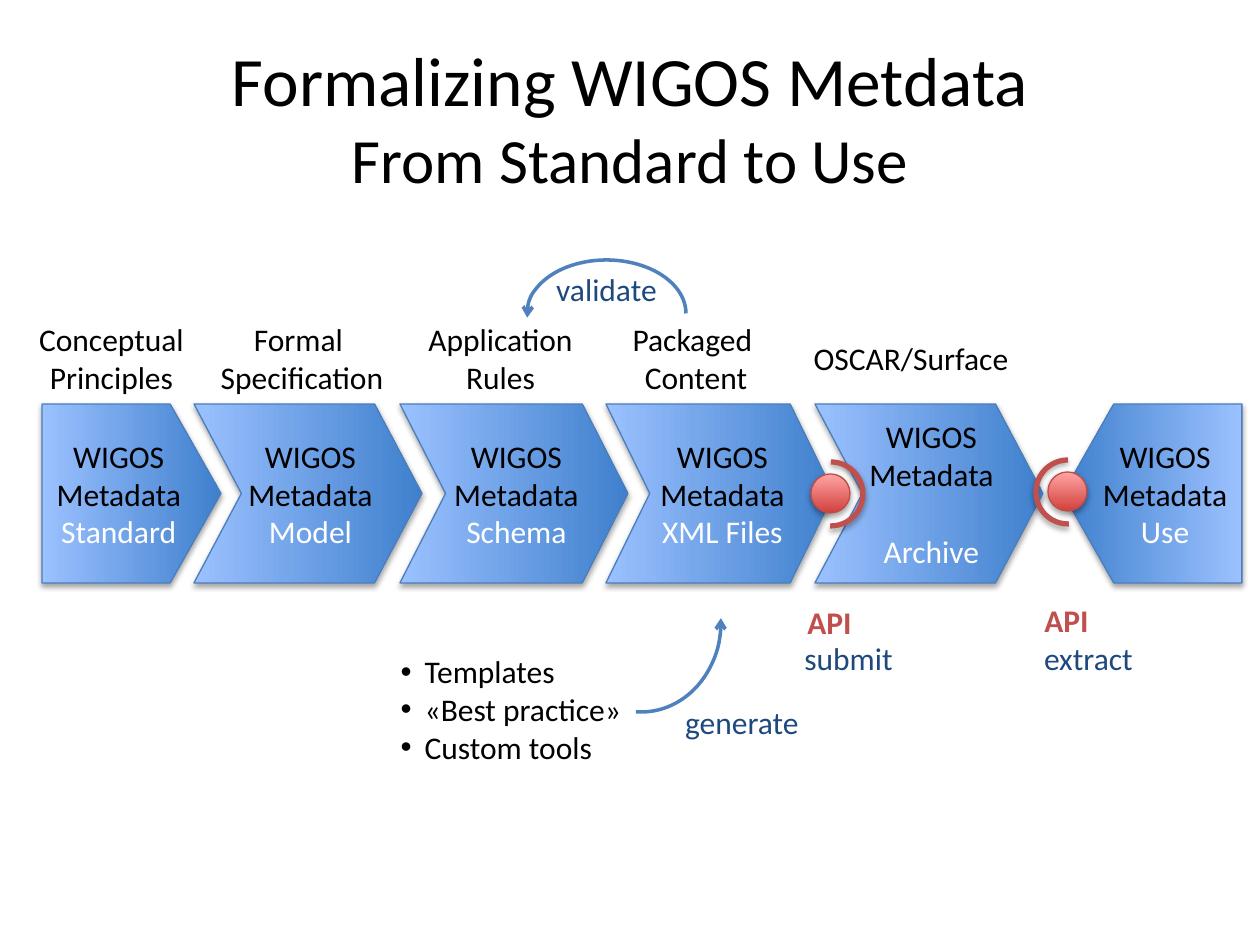
from dataclasses import dataclass
from lxml.etree import SubElement as Sub
from pptx import Presentation
from pptx.dml.color import RGBColor as Rgb
from pptx.enum.shapes import MSO_SHAPE as Kind
from pptx.enum.text import MSO_ANCHOR as Anchor, MSO_AUTO_SIZE as Fit, PP_ALIGN as Align
from pptx.oxml.ns import qn
from pptx.util import Emu, Pt


@dataclass(frozen=True)
class Theme:
    font: str = "Calibri"
    ink: str = "000000"
    white: str = "FFFFFF"
    navy: str = "1F497D"
    arrow: str = "4F81BD"
    edge: str = "4B7EBC"
    blue: tuple = ("9BC1FF", "3F80CD")
    red: str = "C0504D"
    rim: str = "BF4C48"
    ball: tuple = ("D1403C", "FFA6A5")
    head: float = 39.6
    sub: float = 36
    body: float = 18


T = Theme()
TITLE = [("Formalizing WIGOS Metdata", T.head), ("From Standard to Use", T.sub)]
STEPS = [
    ("Use", Kind.PENTAGON, 1063, 0.284, 0, True),
    ("Model", Kind.CHEVRON, 194, 0.265, 0, False),
    ("Standard", Kind.PENTAGON, 42, 0.284, 0, False),
    ("Schema", Kind.CHEVRON, 400, 0.255, 0, False),
    ("XML Files", Kind.CHEVRON, 606, 0.245, 0, False),
    ("Archive", Kind.CHEVRON, 815, 0.265, 22, False),
]
WIDTHS = {Kind.PENTAGON: 179, Kind.CHEVRON: 228}
TOP, TALL = 404, 179
LABELS = [
    (["Conceptual", "Principles"], (26, 314, 171, 89), T.ink),
    (["Formal ", "Specification"], (207, 314, 190, 89), T.ink),
    (["Application", "Rules"], (415, 314, 171, 89), T.ink),
    (["Packaged ", "Content"], (619, 314, 154, 89), T.ink),
    (["OSCAR/Surface"], (800, 333, 222, 50), T.ink),
    (["generate"], (672, 697, 140, 50), T.navy),
    (["submit"], (791, 633, 115, 50), T.navy),
    (["extract"], (1031, 633, 115, 50), T.navy),
]
PORTS = [(831, 494, False), (1068, 492, True)]
TOOLS = ["Templates", "«Best practice»", "Custom tools"]
ARCS = [
    ("validate", (527, 260, 159, 107), (106.211, 0)),
    ("", (562, 532, 159, 180), (214.375, 56.144)),
]


def px(n):
    return Emu(round(n * 914400 / 126))


def place(box):
    return [px(n) for n in box]


def style(run, color, size=T.body, bold=False):
    font = run.font
    font.name, font.size, font.bold = T.font, Pt(size), bold
    font.color.rgb = Rgb.from_string(color)


def write(frame, lines, color, align=Align.CENTER, bold=False):
    frame.text = "\n".join(lines)
    for para in frame.paragraphs:
        para.alignment = align
        for run in para.runs:
            style(run, color, bold=bold)


def label(home, lines, box, color, align=Align.CENTER, bold=False):
    frame = home.add_textbox(*place(box)).text_frame
    frame.word_wrap = False
    write(frame, lines, color, align, bold)


def draw(home, kind, box, color, width, adj=(), flip=False):
    shape = home.add_shape(kind, *place(box))
    for i, value in enumerate(adj):
        shape.adjustments[i] = value
    shape.line.color.rgb = Rgb.from_string(color)
    shape.line.width = Pt(width)
    if flip:
        shape._element.spPr.find(qn("a:xfrm")).set("flipH", "1")
    return shape


def blend(shape, colors, angle):
    shape.fill.gradient()
    shape.fill.gradient_angle = angle
    for stop, color in zip(shape.fill.gradient_stops, colors):
        stop.color.rgb = Rgb.from_string(color)


def add_step(home, word, kind, left, adj, gap, flip):
    box = (left, TOP, WIDTHS[kind], TALL)
    shape = draw(home, kind, box, T.edge, 0.75, [adj], flip)
    blend(shape, T.blue, 0)
    frame = shape.text_frame
    frame.margin_left = px(5)
    frame.margin_right = px(5 if kind == Kind.PENTAGON else 0)
    frame.vertical_anchor = Anchor.MIDDLE
    write(frame, ["WIGOS Metadata", word], T.ink)
    last = frame.paragraphs[1]
    last.space_before = Pt(gap)
    style(last.runs[0], T.white)


def add_port(home, x, y, flip):
    group = home.add_group_shape().shapes
    ball = draw(group, Kind.OVAL, (x - 20, y - 20, 39, 39), T.rim, 0.75)
    blend(ball, T.ball, 90)
    ring = (x - 32, y - 32, 64, 64)
    draw(group, Kind.ARC, ring, T.red, 3, (162, 54.955), flip).fill.background()
    label(group, ["API"], (x - 36, y + 103, 71, 50), T.red, Align.LEFT, True)


def add_arc(home, word, box, adj):
    arc = draw(home, Kind.ARC, box, T.arrow, 2, adj)
    arc.fill.background()
    arc.shadow.inherit = False
    Sub(arc.line._get_or_add_ln(), qn("a:headEnd"), type="arrow")
    if word:
        arc.text_frame.vertical_anchor = Anchor.MIDDLE
        write(arc.text_frame, [word], T.navy)


def set_title(title):
    title.left, title.top, title.width, title.height = place((63, 38, 1134, 158))
    frame = title.text_frame
    frame.auto_size = Fit.NONE
    frame.vertical_anchor = Anchor.MIDDLE
    frame.text = "\v".join(text for text, _ in TITLE)
    for run, (_, size) in zip(frame.paragraphs[0].runs, TITLE):
        style(run, T.ink, size)


def set_list(body):
    body.left, body.top, body.width, body.height = place((388, 646, 256, 127))
    frame = body.text_frame
    frame.auto_size = Fit.NONE
    frame.word_wrap = False
    write(frame, TOOLS, T.ink, Align.LEFT)
    for para in frame.paragraphs:
        para.space_before = Pt(0)
        props = para._p.get_or_add_pPr()
        props.set("marL", str(px(24)))
        props.set("indent", str(-px(24)))


def main():
    deck = Presentation()
    deck.slide_width, deck.slide_height = px(1260), px(945)
    slide = deck.slides.add_slide(deck.slide_layouts[1])
    home = slide.shapes
    set_title(home.title)
    set_list(slide.placeholders[1])
    for step in STEPS:
        add_step(home, *step)
    for port in PORTS:
        add_port(home, *port)
    for item in LABELS:
        label(home, *item)
    for arc in ARCS:
        add_arc(home, *arc)
    deck.save("out.pptx")


if __name__ == "__main__":
    main()
